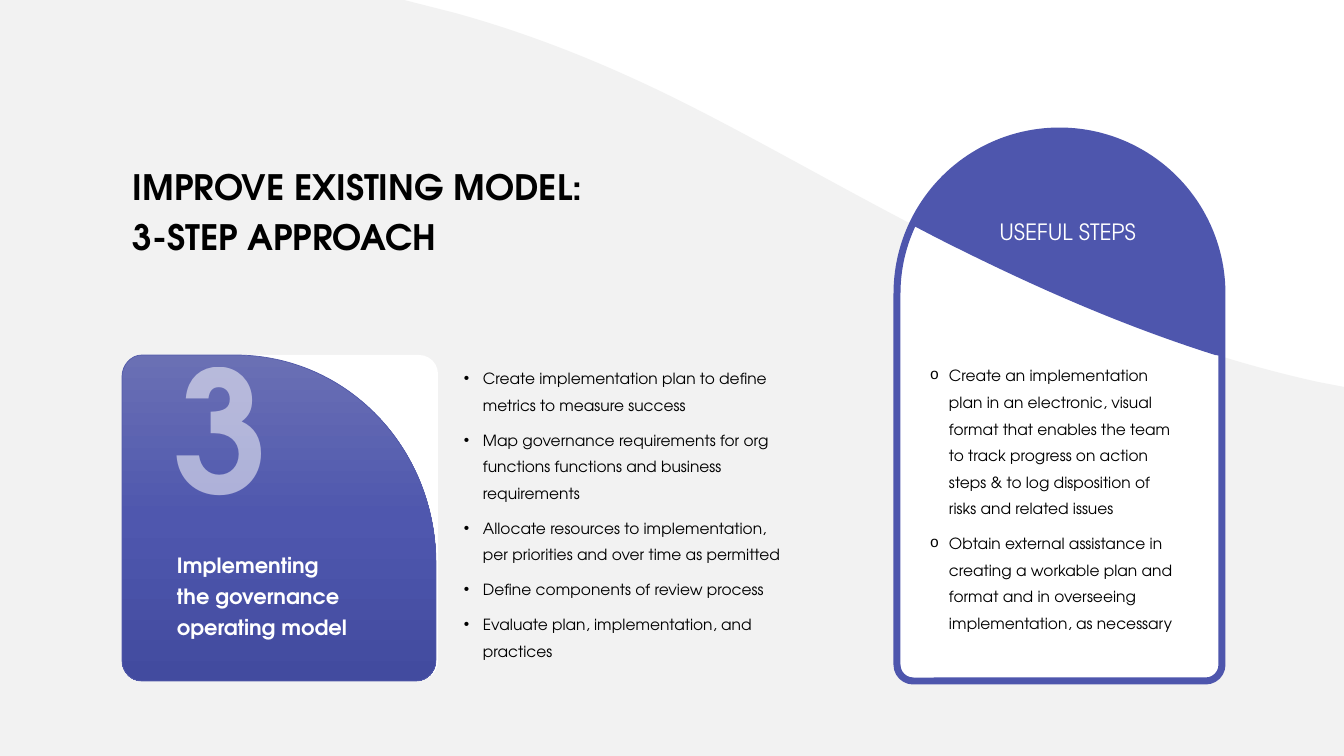
"""Build the three-step approach slide with its step card and useful-steps arch."""
import copy
import dataclasses

import lxml.etree
import pptx
import pptx.dml.color
import pptx.enum.shapes
import pptx.enum.text
import pptx.oxml.ns
import pptx.util

TITLE = ["IMPROVE EXISTING MODEL:", "3-STEP APPROACH"]
STEP_NUMBER = ["3"]
STEP_NAME = ["Implementing the governance operating model"]
ACTIONS = [
    "Create implementation plan to define metrics to measure success",
    "Map governance requirements for org functions functions and business requirements",
    "Allocate resources to implementation, per priorities and over time as permitted",
    "Define components of review process",
    "Evaluate plan, implementation, and practices",
]
USEFUL_HEADING = ["USEFUL STEPS"]
USEFUL_STEPS = [
    "Create an implementation plan in an electronic, visual format that enables the team "
    "to track progress on action steps & to log disposition of risks and related issues",
    "Obtain external assistance in creating a workable plan and format and in overseeing "
    "implementation, as necessary",
]

# Outlines: two numbers draw a line, six draw a cubic curve.
WAVE = [
    (0, 0), (404, 0), (455, 13), (513, 29, 573, 51, 632, 78),
    (816, 161, 1033, 319, 1318, 382), (1344, 387), (1344, 756), (0, 756),
]
ARCH_CAP = [
    (1059, 131), (1149, 131, 1222, 204, 1222, 293), (1222, 356), (1215, 355),
    (1114, 323, 1022, 281, 937, 238), (912, 225), (916, 216),
    (944, 165, 999, 131, 1059, 131),
]
CARD_FRONT = [
    (436, 564), (436, 448, 347, 355, 235, 355), (142, 355),
    (131, 355, 122, 365, 122, 377), (122, 660), (122, 672, 131, 681, 142, 681),
    (416, 681), (427, 681, 436, 672, 436, 660),
]
SCALE = 914400 / 100.8


@dataclasses.dataclass(frozen=True)
class Theme:
    """Colours, fonts and type sizes of the slide."""
    font: str = "TeX Gyre Adventor"
    dot_font: str = "Arial"
    ring_font: str = "Courier New"
    ink: str = "000000"
    white: str = "FFFFFF"
    wave: str = "F2F2F2"
    accent: str = "4E56AD"
    card_line: str = "535BAA"
    card_stops: tuple = ((0, "6A70B4"), (0.5, "4F57AE"), (1, "424B9F"))
    title: int = 25
    body: int = 11
    name: int = 15
    heading: int = 16
    number: int = 120


THEME = Theme()
SHAPE = pptx.enum.shapes.MSO_SHAPE
ALIGN = pptx.enum.text.PP_ALIGN
ANCHOR = pptx.enum.text.MSO_ANCHOR


def px(length):
    """Turn px into EMU."""
    return pptx.util.Emu(round(length * SCALE))


def rgb(value):
    """Turn a hex string into a colour."""
    return pptx.dml.color.RGBColor.from_string(value)


def add_xml(parent, tag, **attributes):
    """Append one element with attributes."""
    return lxml.etree.SubElement(parent, pptx.oxml.ns.qn(tag), attributes)


def paint(shape, fill=None, line=None, width=0):
    """Set fill and outline, without a shadow."""
    shape.shadow.inherit = False
    if fill:
        shape.fill.solid()
        shape.fill.fore_color.rgb = rgb(fill)
    if line:
        shape.line.color.rgb = rgb(line)
        shape.line.width = pptx.util.Pt(width)
    else:
        shape.line.fill.background()


def paint_gradient(shape, stops):
    """Fill a shape with a gradient running from top to bottom."""
    shape.fill.gradient()
    shape.fill.gradient_angle = 270
    stop_list = shape._element.spPr.find(".//" + pptx.oxml.ns.qn("a:gsLst"))
    while len(stop_list) < len(stops):
        stop_list.append(copy.deepcopy(stop_list[-1]))
    for stop, (position, colour) in zip(shape.fill.gradient_stops, stops):
        stop.position = position
        stop.color.rgb = rgb(colour)


def add_outline(page, outline):
    """Draw a closed outline, joining the three points of each curve."""
    corners = [(px(part[i]), px(part[i + 1])) for part in outline for i in range(0, len(part), 2)]
    builder = page.shapes.build_freeform(*corners[0], scale=1.0)
    builder.add_line_segments(corners[1:], close=False)
    shape = builder.convert_to_shape()
    track = shape._element.spPr.find(".//" + pptx.oxml.ns.qn("a:path"))
    lines = iter(track.findall(pptx.oxml.ns.qn("a:lnTo")))
    for part in outline[1:]:
        segment = next(lines)
        if len(part) == 6:
            curve = add_xml(track, "a:cubicBezTo")
            segment.addprevious(curve)
            for line in (segment, next(lines), next(lines)):
                curve.append(line[0])
                track.remove(line)
    add_xml(track, "a:close")
    return shape


def add_preset(page, kind, place, adjustments):
    """Add a preset shape with its adjustments."""
    shape = page.shapes.add_shape(kind, *map(px, place))
    for index, value in enumerate(adjustments):
        shape.adjustments[index] = value
    return shape


def write(page, lines, place, size, box=None, colour=THEME.ink, bold=False, alpha=None,
          align=ALIGN.LEFT, anchor=ANCHOR.TOP, leading=None, after=0, bullet=None, top=5):
    """Write paragraphs into a placed text box or a given placeholder."""
    box = box or page.shapes.add_textbox(0, 0, 0, 0)
    box.left, box.top, box.width, box.height = map(px, place)
    frame = box.text_frame
    frame.word_wrap = True
    frame.auto_size = pptx.enum.text.MSO_AUTO_SIZE.NONE
    frame.vertical_anchor = anchor
    frame.margin_left = frame.margin_right = px(10)
    frame.margin_top, frame.margin_bottom = px(top), px(5)
    for index, line in enumerate(lines):
        para = frame.paragraphs[0] if index == 0 else frame.add_paragraph()
        para.alignment = align
        para.space_before = pptx.util.Pt(0)
        para.space_after = pptx.util.Pt(after)
        para.line_spacing = pptx.util.Pt(leading) if leading else 1.0
        if bullet:
            mark, mark_font = bullet
            properties = para._p.get_or_add_pPr()
            properties.set("marL", str(px(19)))
            properties.set("indent", str(-px(19)))
            add_xml(properties, "a:buFont", typeface=mark_font)
            add_xml(properties, "a:buChar", char=mark)
        span = para.add_run()
        span.text = line
        span.font.name = THEME.font
        span.font.size = pptx.util.Pt(size)
        span.font.bold = bold
        span.font.color.rgb = rgb(colour)
        if alpha:
            colour_node = span._r.find(".//" + pptx.oxml.ns.qn("a:srgbClr"))
            add_xml(colour_node, "a:alpha", val=str(alpha * 1000))
    return box


def main():
    """Compose the slide and save it."""
    deck = pptx.Presentation()
    deck.slide_width, deck.slide_height = px(1344), px(756)
    page = deck.slides.add_slide(deck.slide_layouts[5])

    paint(add_outline(page, WAVE), THEME.wave)
    arch = add_preset(page, SHAPE.ROUND_2_SAME_RECTANGLE, (897, 131, 325, 550), (0.5, 0.05))
    paint(arch, THEME.white, THEME.accent, 5)
    paint(add_outline(page, ARCH_CAP), THEME.accent)
    write(page, USEFUL_STEPS, (920, 354, 265, 283), THEME.body, anchor=ANCHOR.MIDDLE,
          leading=19, after=6, bullet=("o", THEME.ring_font))

    title = write(page, TITLE, (123, 152, 486, 107), THEME.title, box=page.shapes.title,
                  bold=True, leading=36)
    page.shapes._spTree.append(title._element)
    write(page, ACTIONS, (454, 356, 342, 309), THEME.body, leading=19, after=6,
          bullet=("•", THEME.dot_font))

    card = add_preset(page, SHAPE.ROUNDED_RECTANGLE, (124, 355, 314, 325), (0.06,))
    paint(card, THEME.white)
    front = add_outline(page, CARD_FRONT)
    paint(front, line=THEME.card_line, width=0.5)
    paint_gradient(front, THEME.card_stops)
    write(page, STEP_NAME, (167, 542, 197, 139), THEME.name, colour=THEME.white,
          bold=True, leading=22)
    write(page, USEFUL_HEADING, (972, 217, 174, 33), THEME.heading, colour=THEME.white,
          align=ALIGN.RIGHT, leading=18, after=6, top=3)
    write(page, STEP_NUMBER, (164, 321, 116, 214), THEME.number, colour=THEME.white,
          bold=True, alpha=52)
    deck.save("out.pptx")


if __name__ == "__main__":
    main()
